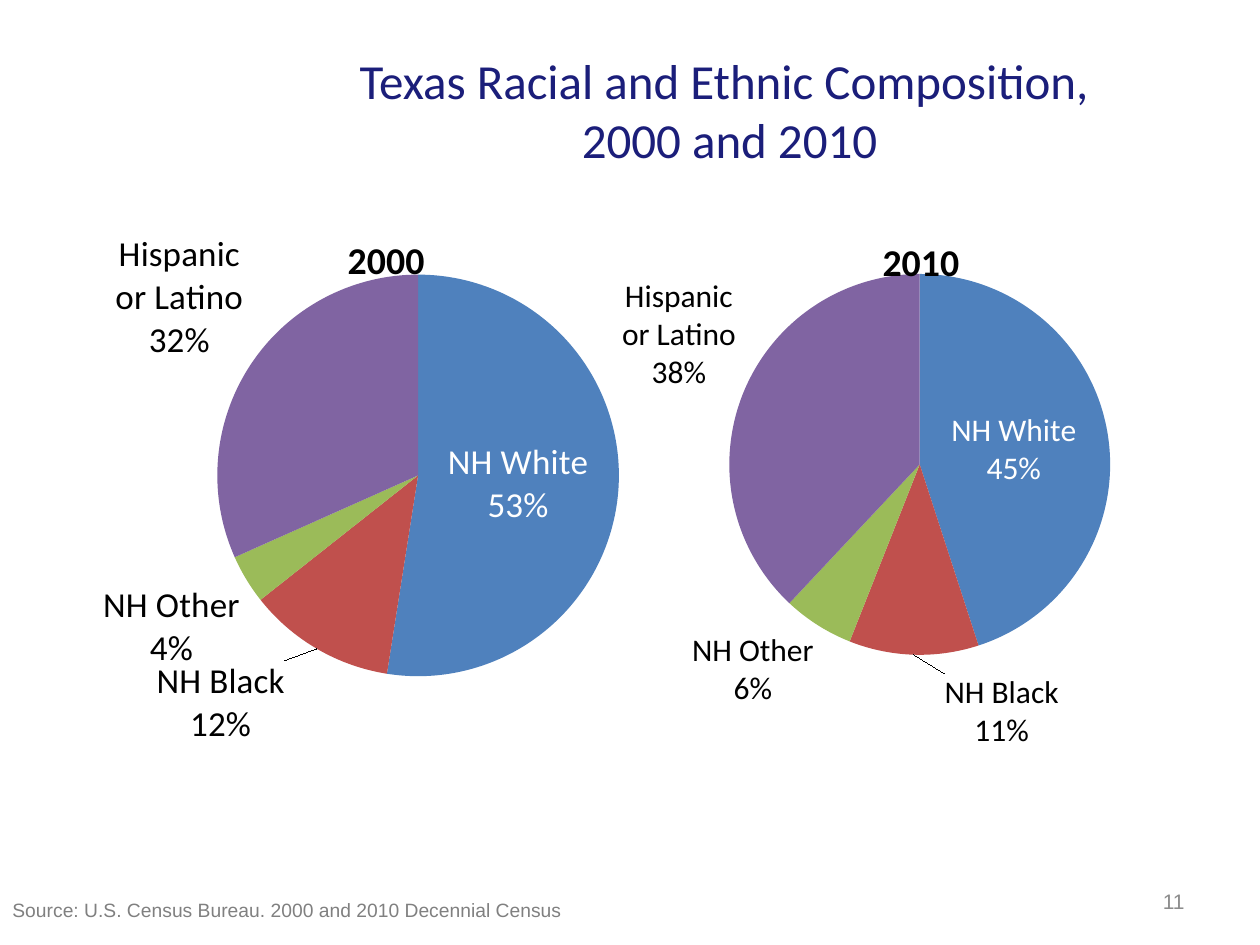
"""Build a slide with two pie charts of the Texas population in 2000 and 2010."""
from lxml.etree import SubElement
from pptx import Presentation
from pptx.chart.data import CategoryChartData
from pptx.dml.color import RGBColor
from pptx.enum.chart import XL_CHART_TYPE, XL_LABEL_POSITION
from pptx.enum.text import MSO_ANCHOR, PP_ALIGN
from pptx.oxml import parse_xml
from pptx.oxml.ns import nsdecls, qn
from pptx.util import Inches, Pt

COLORS = {
    "title": "1B1E7A", "source": "808080", "number": "8C8C8C",
    "black": "000000", "white": "FFFFFF",
    "NH White": "4F81BD", "NH Black": "C0504D",
    "NH Other": "9BBB59", "Hispanic or Latino": "8064A2",
}
GROUPS = ["NH White", "NH Black", "NH Other", "Hispanic or Latino"]
PIES = [
    {"year": "2000", "box": (0.25, 1.67, 5.58, 4.25), "values": (53, 12, 4, 32),
     "size": 20, "title": {"x": 0.44, "y": 0.03}, "overlay": True,
     "plot": {"x": 0.24, "y": 0.12, "w": 0.62, "h": 0.75},
     "shifts": {"NH Black": {"x": -0.04, "y": 0.01}}},
    {"year": "2010", "box": (4.75, 1.58, 5, 4.58), "values": (45, 11, 6, 38),
     "size": 18, "title": {"x": 0.44, "y": 0.05}, "overlay": False,
     "plot": {"x": 0.14, "y": 0.13, "w": 0.74, "h": 0.66},
     "shifts": {"NH Black": {"x": 0.14, "y": 0.02}}},
]


def write_text(text_frame, text, *, size, color, font="Arial",
               align=PP_ALIGN.LEFT, anchor=MSO_ANCHOR.TOP, bold=False):
    text_frame.word_wrap = True
    text_frame.vertical_anchor = anchor
    text_frame.text = text
    for paragraph in text_frame.paragraphs:
        paragraph.alignment = align
        paragraph.font.size = Pt(size)
        paragraph.font.name = font
        paragraph.font.bold = bold
        paragraph.font.color.rgb = RGBColor.from_string(COLORS[color])


def set_layout(parent, index, fractions, inner=False):
    for old_layout in parent.findall(qn("c:layout")):
        parent.remove(old_layout)
    layout = parse_xml(f"<c:layout {nsdecls('c')}><c:manualLayout/></c:layout>")
    settings = {"layoutTarget": "inner"} if inner else {}
    if inner or parent.tag == qn("c:title"):
        settings.update(xMode="edge", yMode="edge")
    for name, value in {**settings, **fractions}.items():
        SubElement(layout[0], qn(f"c:{name}")).set("val", str(value))
    parent.insert(index, layout)


presentation = Presentation()
presentation.slide_width = Inches(10)
presentation.slide_height = Inches(7.5)
slide = presentation.slides.add_slide(presentation.slide_layouts[5])

title = slide.shapes.title
title.left, title.top = Inches(1.75), Inches(0.33)
title.width, title.height = Inches(8.08), Inches(1.08)
write_text(title.text_frame, "Texas Racial and Ethnic Composition, \n2000 and 2010",
           size=28, color="title", font="Calibri", align=PP_ALIGN.CENTER,
           anchor=MSO_ANCHOR.MIDDLE)

for pie in PIES:
    data = CategoryChartData(number_format='0"%"')
    data.categories = GROUPS
    data.add_series(pie["year"], pie["values"])
    box = [Inches(length) for length in pie["box"]]
    chart = slide.shapes.add_chart(XL_CHART_TYPE.PIE, *box, data).chart
    chart.has_legend = False
    chart.font.name = "Calibri"
    chart.font.size = Pt(18)
    chart.font.color.rgb = RGBColor.from_string(COLORS["black"])

    chart.has_title = True
    write_text(chart.chart_title.text_frame, pie["year"], size=21.6, color="black",
               font="Calibri", align=PP_ALIGN.CENTER, bold=True)
    chart_space = chart.element if hasattr(chart, "element") else chart._chartSpace
    chart_title = chart_space.xpath(".//c:chart/c:title")[0]
    set_layout(chart_title, 1, pie["title"])
    chart_title.find(qn("c:overlay")).set("val", str(int(pie["overlay"])))
    set_layout(chart_space.xpath(".//c:plotArea")[0], 0, pie["plot"], inner=True)

    plot = chart.plots[0]
    plot.vary_by_categories = True
    series = plot.series[0]
    series.data_labels.number_format = '0"%"'
    series.data_labels.number_format_is_linked = False
    series.data_labels.position = XL_LABEL_POSITION.BEST_FIT
    series.data_labels.font.size = Pt(pie["size"])
    for index, group in enumerate(GROUPS):
        point = series.points[index]
        point.format.fill.solid()
        point.format.fill.fore_color.rgb = RGBColor.from_string(COLORS[group])
        inside = group == "NH White"
        label = point.data_label
        label.font.size = Pt(pie["size"])
        label.font.color.rgb = RGBColor.from_string(COLORS["white" if inside else "black"])
        label.position = XL_LABEL_POSITION.CENTER if inside else XL_LABEL_POSITION.OUTSIDE_END
        if group in pie["shifts"]:
            label.position = XL_LABEL_POSITION.BEST_FIT
            label_element = chart_space.xpath(f".//c:dLbl[c:idx/@val='{index}']")[0]
            set_layout(label_element, 1, pie["shifts"][group])
    for labels in chart_space.xpath(".//c:dLbl | .//c:ser/c:dLbls"):
        labels.find(qn("c:showVal")).set("val", "1")
        labels.find(qn("c:showCatName")).set("val", "1")
        labels.find(qn("c:showPercent")).set("val", "0")
        separator = parse_xml(f"<c:separator {nsdecls('c')}>\n</c:separator>")
        labels.find(qn("c:showBubbleSize")).addnext(separator)

source = slide.shapes.add_textbox(Inches(0), Inches(7.08), Inches(8.75), Inches(0.47))
write_text(source.text_frame, "Source: U.S. Census Bureau. 2000 and 2010 Decennial Census",
           size=11, color="source")
number = slide.shapes.add_textbox(Inches(7.17), Inches(6.95), Inches(2.33), Inches(0.4))
write_text(number.text_frame, "11", size=12, color="number", align=PP_ALIGN.RIGHT,
           anchor=MSO_ANCHOR.MIDDLE)

presentation.save("out.pptx")
